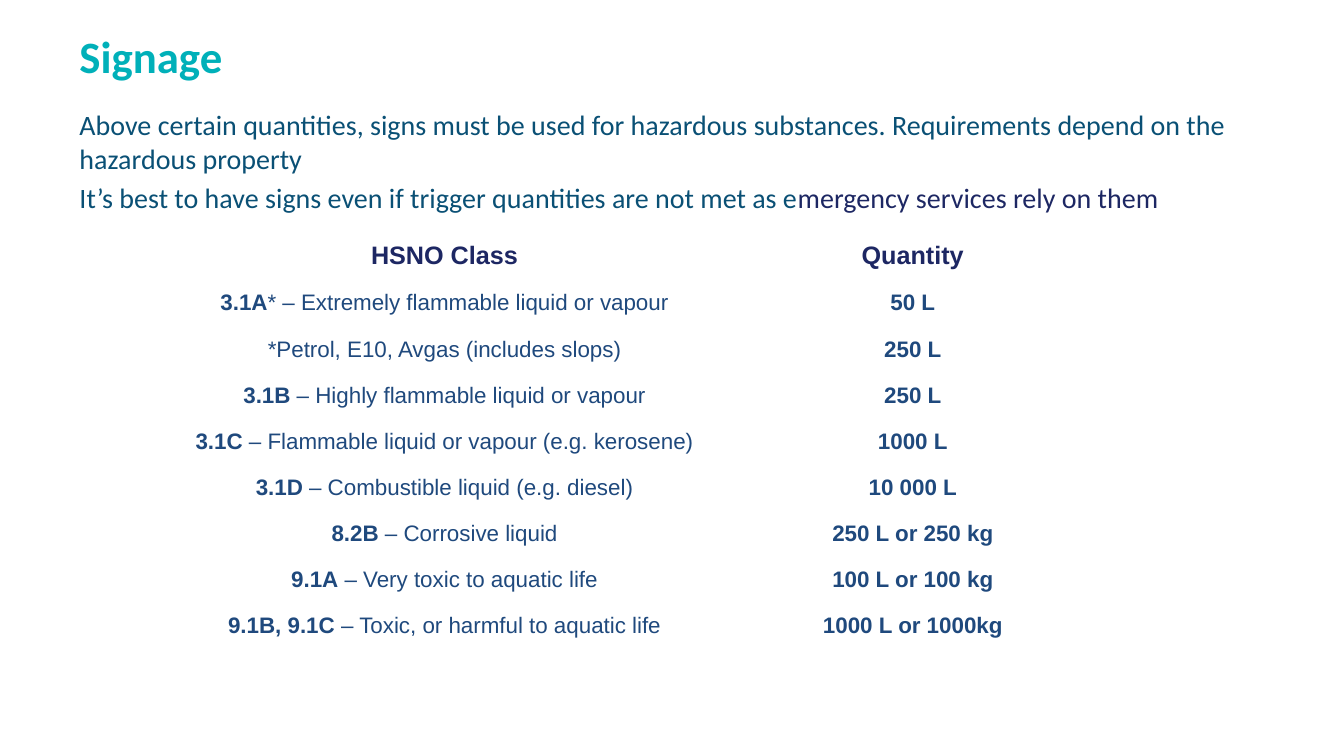
"""Build the signage slide with its table of trigger quantities."""
from pptx import Presentation
from pptx.dml.color import RGBColor
from pptx.enum.text import MSO_ANCHOR, PP_ALIGN
from pptx.util import Pt

CENTER = PP_ALIGN.CENTER
TOP = MSO_ANCHOR.TOP
TEAL, BLUE, NAVY, TABLE_BLUE = "00B0B9", "0A5075", "1D2763", "1F497D"

TITLE = "Signage"
INTRO = [
    [("Above certain quantities, signs must be used for hazardous substances. "
      "Requirements depend on the hazardous property", BLUE)],
    [("It’s best to have signs even if trigger quantities are not met as e", BLUE),
     ("mergency services rely on them", NAVY)],
]
HEADERS = ("HSNO Class", "Quantity")
TRIGGERS = [
    ("3.1A", "* – Extremely flammable liquid or vapour", "50 L"),
    ("", "*Petrol, E10, Avgas (includes slops)", "250 L"),
    ("3.1B", " – Highly flammable liquid or vapour", "250 L"),
    ("3.1C", " – Flammable liquid or vapour (e.g. kerosene)", "1000 L"),
    ("3.1D", " – Combustible liquid (e.g. diesel)", "10 000 L"),
    ("8.2B", " – Corrosive liquid", "250 L or 250 kg"),
    ("9.1A", " – Very toxic to aquatic life", "100 L or 100 kg"),
    ("9.1B, 9.1C", " – Toxic, or harmful to aquatic life", "1000 L or 1000kg"),
]
COLUMN_WIDTHS = (377.3, 291.6)
HEADER_HEIGHT, ROW_HEIGHT = 31, 28.8


def color(hex_string):
    return RGBColor.from_string(hex_string)


def style(paragraph, name, size, hex_string):
    paragraph.font.name = name
    paragraph.font.size = Pt(size)
    paragraph.font.color.rgb = color(hex_string)


def add_text_frame(slide, top, height):
    text_box = slide.shapes.add_textbox(Pt(49.7), Pt(top), Pt(860.4), Pt(height))
    frame = text_box.text_frame
    frame.word_wrap = True
    frame.margin_top = Pt(5.5)
    return frame


def fill_cell(cell, runs, size, hex_string):
    cell.fill.background()
    cell.margin_left = cell.margin_right = Pt(5)
    cell.margin_top = cell.margin_bottom = Pt(6.84)
    cell.vertical_anchor = TOP
    paragraph = cell.text_frame.paragraphs[0]
    paragraph.alignment = CENTER
    style(paragraph, "Arial", size, hex_string)
    for text, bold in runs:
        if text:
            run = paragraph.add_run()
            run.text = text
            run.font.bold = bold


def add_trigger_table(slide):
    height = HEADER_HEIGHT + ROW_HEIGHT * len(TRIGGERS)
    table = slide.shapes.add_table(
        len(TRIGGERS) + 1, len(COLUMN_WIDTHS), Pt(128.9), Pt(165.6),
        Pt(sum(COLUMN_WIDTHS)), Pt(height)).table
    table.first_row = table.horz_banding = False
    for column, width in zip(table.columns, COLUMN_WIDTHS):
        column.width = Pt(width)
    for row in table.rows:
        row.height = Pt(ROW_HEIGHT)
    table.rows[0].height = Pt(HEADER_HEIGHT)
    for index, header in enumerate(HEADERS):
        fill_cell(table.cell(0, index), [(header, True)], 18, NAVY)
    for index, (code, hazard, quantity) in enumerate(TRIGGERS, 1):
        fill_cell(table.cell(index, 0), [(code, True), (hazard, False)], 16, TABLE_BLUE)
        fill_cell(table.cell(index, 1), [(quantity, True)], 16, TABLE_BLUE)


def main():
    presentation = Presentation()
    presentation.slide_width, presentation.slide_height = Pt(960), Pt(540)
    slide = presentation.slides.add_slide(presentation.slide_layouts[6])

    title = add_text_frame(slide, 21.6, 67).paragraphs[0]
    title.text = TITLE
    title.line_spacing = Pt(32)
    style(title, "Calibri", 32, TEAL)
    title.font.bold = True

    frame = add_text_frame(slide, 71.3, 398.9)
    for index, runs in enumerate(INTRO):
        paragraph = frame.add_paragraph() if index else frame.paragraphs[0]
        paragraph.space_before = Pt(4 if index else 0)
        style(paragraph, "Calibri", 20, BLUE)
        for text, hex_string in runs:
            run = paragraph.add_run()
            run.text = text
            run.font.color.rgb = color(hex_string)

    add_trigger_table(slide)
    presentation.save("out.pptx")


if __name__ == "__main__":
    main()
